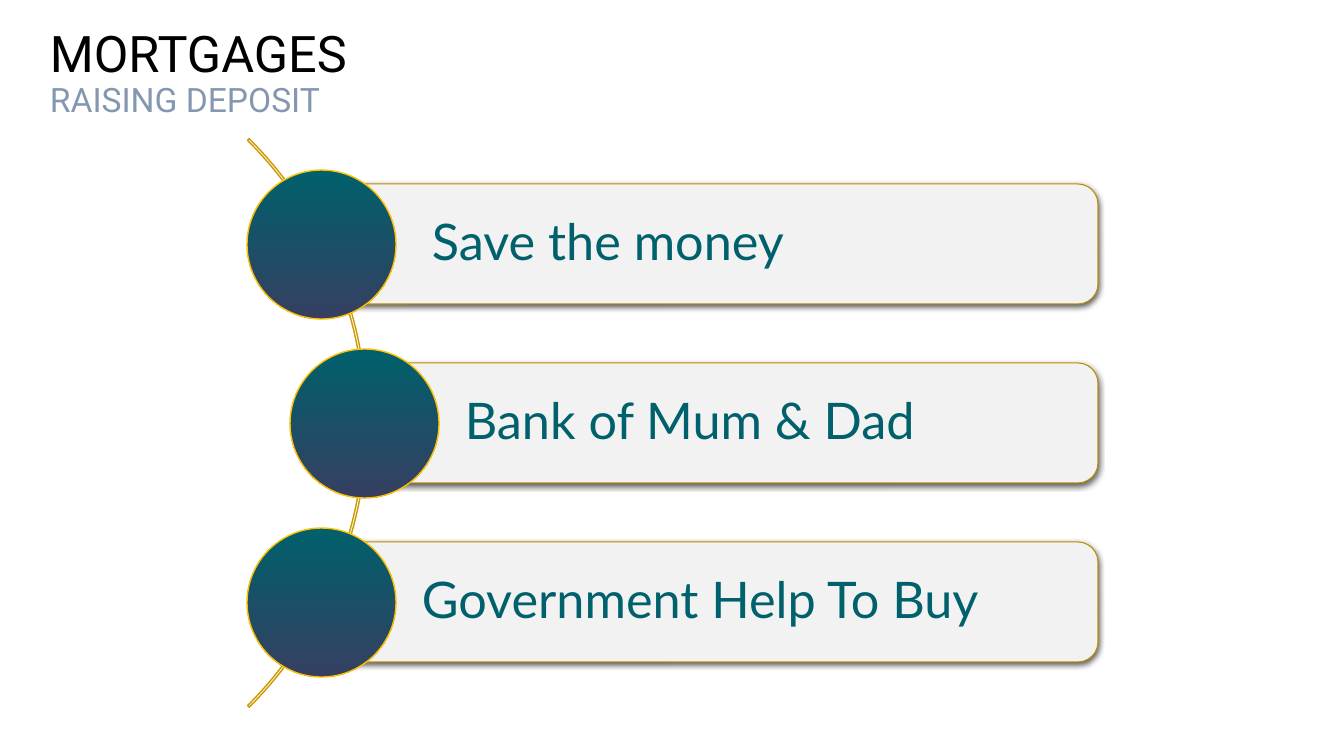
from dataclasses import dataclass

from lxml.etree import SubElement
from pptx import Presentation
from pptx.dml.color import RGBColor
from pptx.enum.shapes import MSO_SHAPE
from pptx.enum.text import MSO_ANCHOR, PP_ALIGN
from pptx.oxml.ns import qn
from pptx.shapes.autoshape import Shape
from pptx.slide import Slide
from pptx.text.text import TextFrame
from pptx.util import Emu, Pt

EMU_PER_PX = 914400 / 100.8


@dataclass(frozen=True)
class Theme:
    ink: str = "000000"
    subtitle: str = "8497B0"
    teal: str = "00606B"
    navy: str = "353F61"
    bar: str = "F2F2F2"
    bar_line: str = "BD8E00"
    arc_line: str = "CC9A00"
    circle_line: str = "FFC000"
    heading_font: str = "Roboto"
    option_font: str = "Lato"
    large: int = 36
    small: int = 24


@dataclass(frozen=True)
class Box:
    left: int
    top: int
    width: int
    height: int


@dataclass(frozen=True)
class DepositOption:
    label: str
    center_x: int
    text_inset: int


THEME = Theme()
OPTIONS = (
    DepositOption("Save the money", 321, 105),
    DepositOption("Bank of Mum & Dad", 364, 95),
    DepositOption("Government Help To Buy", 321, 95),
)
FIRST_CENTER_Y = 244
OPTION_PITCH = 179
BAR_RIGHT = 1098
BAR_HEIGHT = 120
CIRCLE_SIZE = 149
ARC_BOX = Box(-437, 21, 804, 804)
HEADING_BOX = Box(40, 34, 1027, 81)


def px(length: float) -> Emu:
    return Emu(round(length * EMU_PER_PX))


def add_outlined_shape(slide: Slide, kind: MSO_SHAPE, box: Box, line: str, weight: float) -> Shape:
    shape = slide.shapes.add_shape(kind, px(box.left), px(box.top), px(box.width), px(box.height))
    shape.shadow.inherit = False
    shape.line.color.rgb = RGBColor.from_string(line)
    shape.line.width = Pt(weight)
    return shape


def add_line_of_text(frame: TextFrame, text: str, font: str, size: int, color: str, first: bool = True) -> None:
    paragraph = frame.paragraphs[0] if first else frame.add_paragraph()
    paragraph.alignment = PP_ALIGN.LEFT
    paragraph.line_spacing = 0.9
    paragraph.space_before = Pt(0)
    run = paragraph.add_run()
    run.text = text
    run.font.name = font
    run.font.size = Pt(size)
    run.font.color.rgb = RGBColor.from_string(color)


def add_drop_shadow(shape: Shape) -> None:
    effects = shape.element.spPr.find(qn("a:effectLst"))
    shadow = SubElement(effects, qn("a:outerShdw"), blurRad=str(Pt(4.5)), dist=str(Pt(1.5)),
                        dir="5400000", algn="ctr", rotWithShape="0")
    color = SubElement(shadow, qn("a:srgbClr"), val="000000")
    SubElement(color, qn("a:alpha"), val="63000")


def add_heading(slide: Slide) -> None:
    box = HEADING_BOX
    frame = slide.shapes.add_textbox(px(box.left), px(box.top), px(box.width), px(box.height)).text_frame
    frame.word_wrap = True
    frame.vertical_anchor = MSO_ANCHOR.MIDDLE
    add_line_of_text(frame, "MORTGAGES", THEME.heading_font, THEME.large, THEME.ink)
    add_line_of_text(frame, "RAISING DEPOSIT", THEME.heading_font, THEME.small, THEME.subtitle, first=False)


def add_arc(slide: Slide) -> None:
    arc = add_outlined_shape(slide, MSO_SHAPE.BLOCK_ARC, ARC_BOX, THEME.arc_line, 1)
    arc.fill.background()
    # Start and end angles are in units of 100000 / 60000 degrees.
    for index, value in enumerate((189, 27, 0.003)):
        arc.adjustments[index] = value


def add_bar(slide: Slide, option: DepositOption, center_y: int) -> None:
    box = Box(option.center_x, center_y - BAR_HEIGHT // 2, BAR_RIGHT - option.center_x, BAR_HEIGHT)
    bar = add_outlined_shape(slide, MSO_SHAPE.ROUNDED_RECTANGLE, box, THEME.bar_line, 0.75)
    bar.fill.solid()
    bar.fill.fore_color.rgb = RGBColor.from_string(THEME.bar)
    add_drop_shadow(bar)
    frame = bar.text_frame
    frame.word_wrap = True
    frame.vertical_anchor = MSO_ANCHOR.MIDDLE
    frame.margin_left = px(option.text_inset)
    frame.margin_top = frame.margin_right = frame.margin_bottom = px(11)
    add_line_of_text(frame, option.label, THEME.option_font, THEME.large, THEME.teal)


def add_circle(slide: Slide, center_x: int, center_y: int) -> None:
    radius = CIRCLE_SIZE // 2
    box = Box(center_x - radius, center_y - radius, CIRCLE_SIZE, CIRCLE_SIZE)
    circle = add_outlined_shape(slide, MSO_SHAPE.OVAL, box, THEME.circle_line, 1)
    circle.fill.gradient()
    circle.fill.gradient_angle = 270
    for stop, position, color in zip(circle.fill.gradient_stops, (0, 1), (THEME.teal, THEME.navy)):
        stop.position = position
        stop.color.rgb = RGBColor.from_string(color)


def main() -> None:
    presentation = Presentation()
    presentation.slide_width = px(1344)
    presentation.slide_height = px(756)
    slide = presentation.slides.add_slide(presentation.slide_layouts[6])
    add_arc(slide)
    for index, option in enumerate(OPTIONS):
        center_y = FIRST_CENTER_Y + index * OPTION_PITCH
        add_bar(slide, option, center_y)
        add_circle(slide, option.center_x, center_y)
    add_heading(slide)
    presentation.save("out.pptx")


if __name__ == "__main__":
    main()
